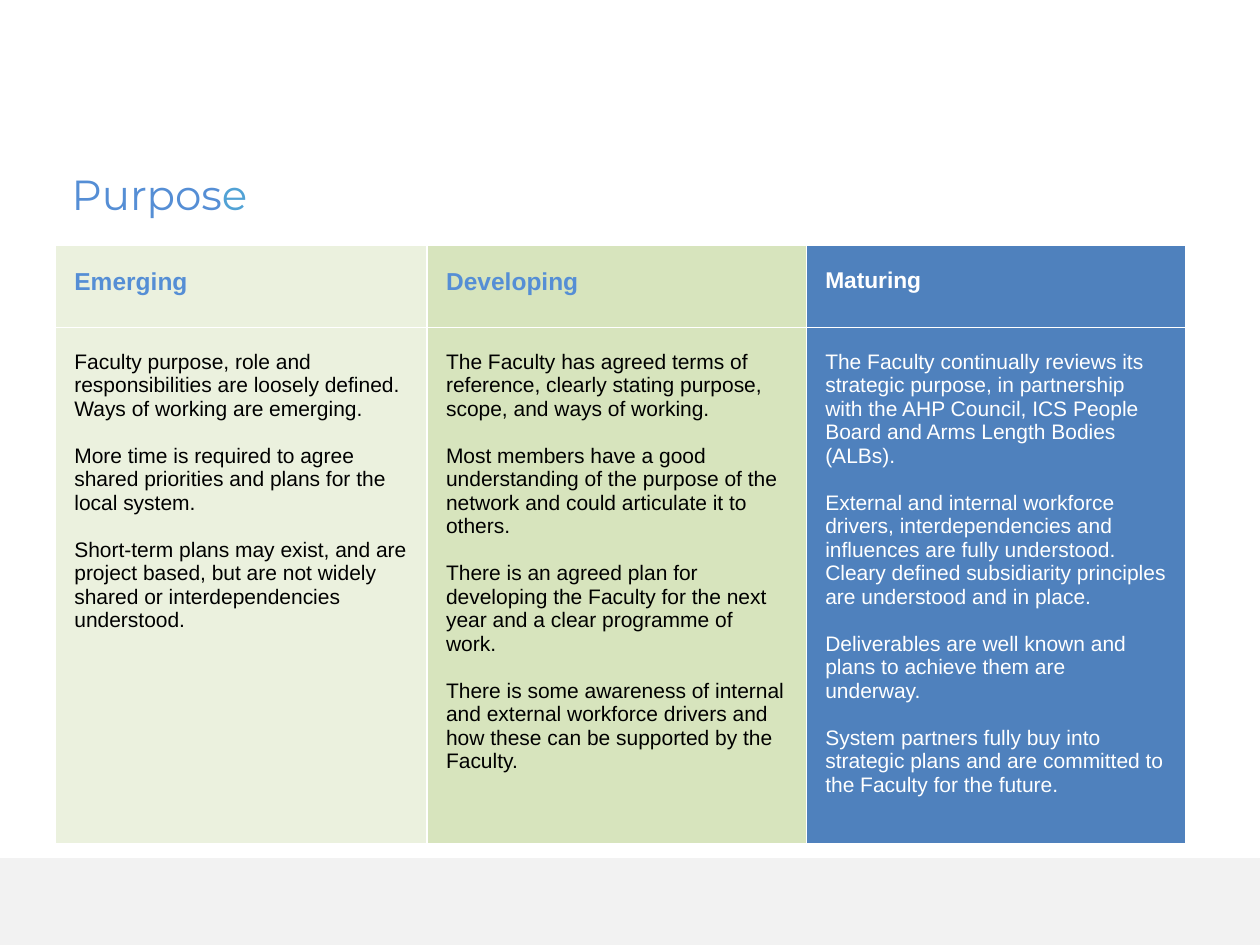
"""Build the slide on the three maturity stages of the Faculty's purpose."""
from lxml import etree
from pptx import Presentation
from pptx.dml.color import RGBColor
from pptx.enum import shapes
from pptx.oxml import ns
from pptx.util import Inches, Pt

COLORS = {
    "white": "FFFFFF", "black": "000000", "footer": "F2F2F2",
    "heading": "558ED5", "accent": "51A2D5",
    "pale": "EBF1DE", "green": "D7E4BD", "blue": "4F81BD",
}


def add_text(paragraph, words, size=12, color="black", bold=False, font="Arial", before=0):
    paragraph.space_before = Pt(before)
    run = paragraph.add_run()
    run.text = words
    run.font.size = Pt(size)
    run.font.name = font
    run.font.bold = bold
    run.font.color.rgb = RGBColor.from_string(COLORS[color])


def style_cell(cell, fill):
    cell.margin_left = cell.margin_right = Inches(0.15)
    cell.margin_top = Inches(0.18)
    cell.margin_bottom = Inches(0.04)
    properties = cell._tc.get_or_add_tcPr()
    for side in ("a:lnL", "a:lnR", "a:lnT", "a:lnB"):
        border = etree.SubElement(properties, ns.qn(side), w=str(Pt(1)))
        paint = etree.SubElement(border, ns.qn("a:solidFill"))
        etree.SubElement(paint, ns.qn("a:srgbClr"), val=COLORS["white"])
    cell.fill.solid()
    cell.fill.fore_color.rgb = RGBColor.from_string(COLORS[fill])


stages = [
    ("Emerging", 2.95, "pale", 14, "heading", "black", [
        "Faculty purpose, role and responsibilities are loosely defined. Ways of working are emerging.",
        "More time is required to agree shared priorities and plans for the local system.",
        "Short-term plans may exist, and are project based, but are not widely shared or "
        "interdependencies understood.",
    ]),
    ("Developing", 3.01, "green", 14, "heading", "black", [
        "The Faculty has agreed terms of reference, clearly stating purpose, scope, and ways of working.",
        "Most members have a good understanding of the purpose of the network and could "
        "articulate it to others.",
        "There is an agreed plan for developing the Faculty for the next year and a clear "
        "programme of work.",
        "There is some awareness of internal and external workforce drivers and how these can be "
        "supported by the Faculty.",
    ]),
    ("Maturing", 3.01, "blue", 13, "white", "white", [
        "The Faculty continually reviews its strategic purpose, in partnership with the AHP Council, "
        "ICS People Board and Arms Length Bodies (ALBs).",
        "External and internal workforce drivers, interdependencies and influences are fully "
        "understood. Cleary defined subsidiarity principles are understood and in place.",
        "Deliverables are well known and plans to achieve them are underway.",
        "System partners fully buy into strategic plans and are committed to the Faculty for the future.",
    ]),
]

deck = Presentation()
deck.slide_width = Inches(10)
deck.slide_height = Inches(7.5)
slide = deck.slides.add_slide(deck.slide_layouts[6])

footer = slide.shapes.add_shape(
    shapes.MSO_SHAPE.RECTANGLE, Inches(0), Inches(6.81), Inches(10), Inches(0.69))
footer.shadow.inherit = False
footer.fill.solid()
footer.fill.fore_color.rgb = RGBColor.from_string(COLORS["footer"])
footer.line.fill.background()

maturity = slide.shapes.add_table(
    2, len(stages), Inches(0.44), Inches(1.95), Inches(8.97), Inches(4.75)).table
maturity.first_row = False
maturity.horz_banding = False
maturity.rows[0].height = Inches(0.65)
maturity.rows[1].height = Inches(4.1)

for column, (stage, width, fill, size, heading_color, body_color, statements) in enumerate(stages):
    maturity.columns[column].width = Inches(width)
    heading, body = maturity.cell(0, column), maturity.cell(1, column)
    style_cell(heading, fill)
    style_cell(body, fill)
    add_text(heading.text_frame.paragraphs[0], stage, size=size, color=heading_color, bold=True)
    for index, statement in enumerate(statements):
        paragraph = body.text_frame.add_paragraph() if index else body.text_frame.paragraphs[0]
        add_text(paragraph, statement, color=body_color, before=13.4 if index else 0)

title = slide.shapes.add_textbox(Inches(0.47), Inches(1.29), Inches(1.71), Inches(0.5))
title.text_frame.word_wrap = False
for letters, color in (("Purpos", "heading"), ("e", "accent")):
    add_text(title.text_frame.paragraphs[0], letters, size=24, color=color, font="Montserrat")

deck.save("out.pptx")
